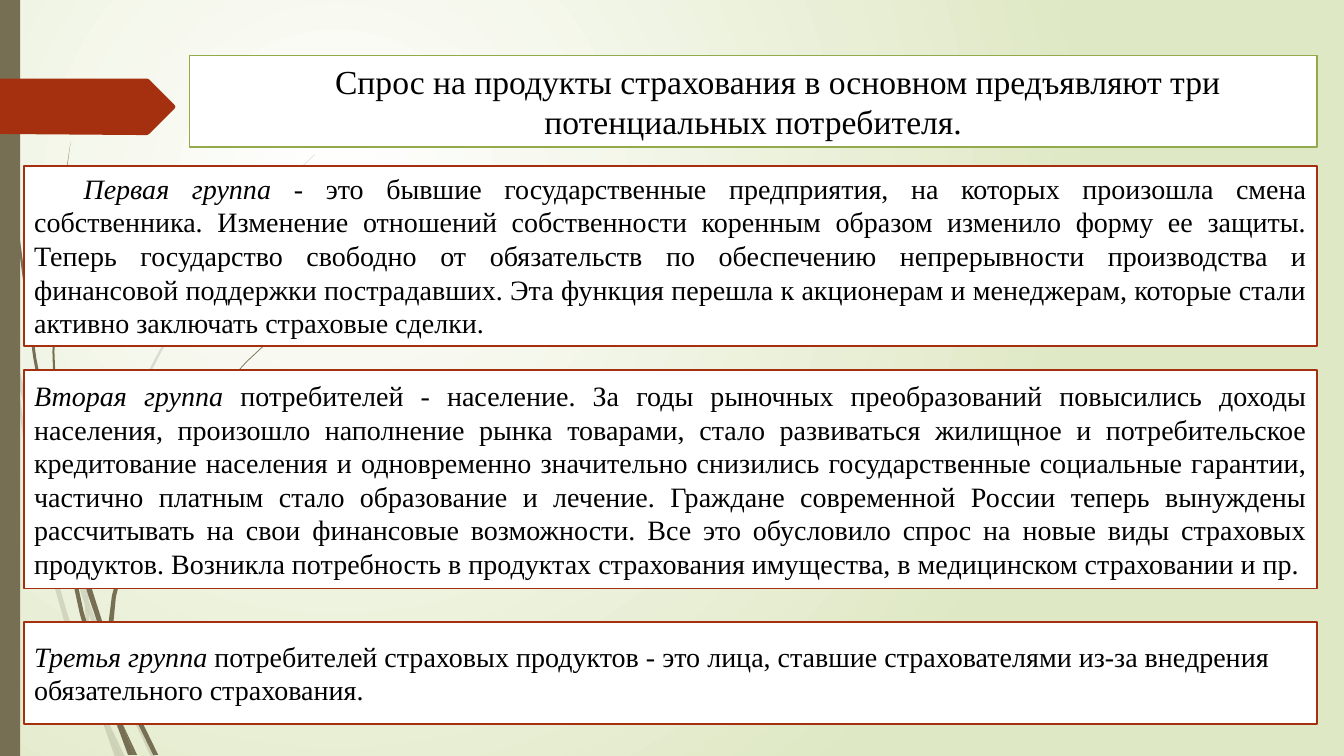
from dataclasses import dataclass

import lxml.etree
import pptx
import pptx.dml.color
import pptx.enum.shapes
import pptx.enum.text
import pptx.oxml.ns
import pptx.util

Inches = pptx.util.Inches
ALIGN = pptx.enum.text.PP_ALIGN
ANCHOR = pptx.enum.text.MSO_ANCHOR
RECT = pptx.enum.shapes.MSO_SHAPE.RECTANGLE

COLORS = {
    "white": "FFFFFF",
    "black": "000000",
    "pale": "DFE8C4",
    "stem": "766F54",
    "red": "A53010",
    "green": "92AA4C",
}
FONT = "Times New Roman"
INDENT = 0.49


@dataclass
class Box:
    top: float
    height: float
    lead: str
    text: str
    align: ALIGN = ALIGN.JUSTIFY
    anchor: ANCHOR = ANCHOR.MIDDLE
    indent: float = 0


BOXES = [
    Box(1.65, 1.78, "Первая группа",
        " - это бывшие государственные предприятия, на которых произошла смена собственника. "
        "Изменение отношений собственности коренным образом изменило форму ее защиты. "
        "Теперь государство свободно от обязательств по обеспечению непрерывности производства "
        "и финансовой поддержки пострадавших. Эта функция перешла к акционерам и менеджерам, "
        "которые стали активно заключать страховые сделки.",
        anchor=ANCHOR.TOP, indent=INDENT),
    Box(3.67, 2.17, "Вторая группа",
        " потребителей - население. За годы рыночных преобразований повысились доходы населения, "
        "произошло наполнение рынка товарами, стало развиваться жилищное и потребительское "
        "кредитование населения и одновременно значительно снизились государственные социальные "
        "гарантии, частично платным стало образование и лечение. Граждане современной России "
        "теперь вынуждены рассчитывать на свои финансовые возможности. Все это обусловило спрос "
        "на новые виды страховых продуктов. Возникла потребность в продуктах страхования "
        "имущества, в медицинском страховании и пр."),
    Box(6.17, 1.01, "Третья группа",
        " потребителей страховых продуктов - это лица, ставшие страхователями из-за внедрения "
        "обязательного страхования.",
        align=ALIGN.LEFT),
]

# Outline points in hundredths of an inch
PALE_STEMS = [
    [(11, 350), (9, 322), (0, 282), (0, 299), (10, 344)],
    [(58, 522), (84, 599), (85, 586), (62, 520), (36, 434), (14, 345), (17, 376), (36, 450)],
    [(92, 607), (88, 596), (88, 610), (123, 694), (150, 751), (155, 751), (127, 692)],
    [(119, 751), (124, 751), (105, 711)],
    [(93, 683), (70, 619), (48, 545), (31, 469), (17, 376), (11, 350), (28, 470), (44, 546),
     (65, 621), (92, 693), (101, 714), (99, 707)],
    [(84, 599), (87, 646), (93, 683), (96, 692), (105, 711), (103, 706), (91, 646), (88, 610),
     (88, 608)],
    [(88, 584), (93, 522), (110, 462), (132, 404), (160, 349), (193, 295), (229, 245), (268, 198),
     (290, 175), (312, 154), (312, 153), (289, 175), (268, 197), (228, 244), (191, 294),
     (158, 348), (129, 403), (107, 461), (91, 521), (85, 584), (85, 586), (88, 596)],
    [(101, 714), (114, 751), (119, 751)],
    [(88, 608), (88, 596), (85, 586), (84, 599)],
    [(96, 692), (93, 683), (99, 707), (101, 714), (119, 751), (105, 711)],
]
DARK_STEMS = [
    [(7, 110), (17, 233), (33, 355), (56, 477), (57, 481), (55, 457), (55, 453), (36, 355),
     (19, 232), (8, 109), (5, 48), (4, 0), (3, 0), (4, 48)],
    [(88, 592), (106, 645), (106, 631), (93, 590), (75, 532), (60, 472), (64, 505), (75, 549)],
    [(113, 649), (110, 641), (111, 656), (132, 708), (152, 749), (157, 749), (136, 706)],
    [(110, 691), (98, 657), (83, 607), (72, 556), (64, 505), (57, 477), (68, 557), (79, 608),
     (93, 659), (111, 708), (117, 722), (116, 717)],
    [(60, 472), (58, 453), (54, 349), (58, 245), (63, 193), (70, 141), (62, 193), (56, 245),
     (52, 349), (55, 449)],
    [(133, 749), (136, 749), (122, 719)],
    [(111, 633), (115, 592), (125, 552), (140, 513), (158, 476), (181, 440), (205, 406),
     (231, 374), (245, 359), (261, 344), (260, 344), (245, 358), (231, 373), (204, 405),
     (179, 439), (156, 474), (137, 512), (122, 551), (111, 591), (106, 631), (110, 641)],
    [(117, 722), (127, 749), (131, 749)],
    [(106, 645), (110, 691), (116, 706), (122, 719), (121, 716), (111, 656), (109, 651)],
    [(116, 706), (110, 691), (116, 717), (117, 722), (130, 749), (133, 749), (122, 719)],
]
ARROW = [(173, 108), (148, 133), (146, 134), (136, 134), (0, 133), (0, 78), (146, 78), (148, 79),
         (173, 104), (174, 106)]


def rgb(name: str) -> pptx.dml.color.RGBColor:
    return pptx.dml.color.RGBColor.from_string(COLORS[name])


def paint(shape, fill: str, line: str | None = None) -> None:
    shape.fill.solid()
    shape.fill.fore_color.rgb = rgb(fill)
    if line:
        shape.line.color.rgb = rgb(line)
        shape.line.width = pptx.util.Pt(1.25)
    else:
        shape.line.fill.background()


def place(shape, left: float, top: float, width: float, height: float) -> None:
    shape.left, shape.top = Inches(left), Inches(top)
    shape.width, shape.height = Inches(width), Inches(height)


def write(shape, text: str, *, lead: str = "", size: int = 20, align: ALIGN = ALIGN.LEFT,
          anchor: ANCHOR = ANCHOR.TOP, indent: float = 0) -> None:
    """Fill the shape with one paragraph that opens with an italic lead."""
    frame = shape.text_frame
    frame.word_wrap = True
    frame.auto_size = pptx.enum.text.MSO_AUTO_SIZE.NONE
    frame.vertical_anchor = anchor
    para = frame.paragraphs[0]
    para.alignment = align
    if indent:
        props = para._p.get_or_add_pPr()
        props.set("marL", "0")
        props.set("indent", str(Inches(indent)))
    for part, slant in ((lead, True), (text, False)):
        if part:
            run = para.add_run()
            run.text = part
            run.font.name = FONT
            run.font.size = pptx.util.Pt(size)
            run.font.italic = slant
            run.font.color.rgb = rgb("black")


def draw(slide, points: list[tuple[int, int]], color: str, alpha: int = 100) -> None:
    pen = slide.shapes.build_freeform(*points[0], scale=Inches(0.01))
    pen.add_line_segments(points[1:], close=True)
    shape = pen.convert_to_shape()
    shape.shadow.inherit = False
    paint(shape, color)
    if alpha < 100:
        tint = shape.element.spPr.find(".//" + pptx.oxml.ns.qn("a:srgbClr"))
        lxml.etree.SubElement(tint, pptx.oxml.ns.qn("a:alpha"), val=str(alpha * 1000))


def add_rect(slide, *spot: float, fill: str, line: str | None = None):
    shape = slide.shapes.add_shape(RECT, *map(Inches, spot))
    shape.shadow.inherit = False
    paint(shape, fill, line)
    return shape


def set_back(slide) -> None:
    """Give the slide a round gradient from white to pale green."""
    fill = slide.background.fill
    fill.gradient()
    for stop, name, spot in zip(fill.gradient_stops, ("white", "pale"), (0, 1)):
        stop.color.rgb = rgb(name)
        stop.position = spot
    qn = pptx.oxml.ns.qn
    grad = slide.element.find(".//" + qn("a:gradFill"))
    ring = lxml.etree.Element(qn("a:path"), path="circle")
    lxml.etree.SubElement(ring, qn("a:fillToRect"), l="50000", t="50000", r="100000", b="100000")
    grad.replace(grad.find(qn("a:lin")), ring)


def main() -> None:
    deck = pptx.Presentation()
    deck.slide_width, deck.slide_height = Inches(13.33), Inches(7.5)
    slide = deck.slides.add_slide(deck.slide_layouts[5])
    set_back(slide)

    for stem in PALE_STEMS:
        draw(slide, stem, "stem", alpha=20)
    for stem in DARK_STEMS:
        draw(slide, stem, "stem")
    add_rect(slide, 0, 0, 0.2, 7.5, fill="stem")
    draw(slide, ARROW, "red")

    title = slide.shapes.title
    place(title, 1.88, 0.55, 11.18, 0.91)
    paint(title, "white", "green")
    write(title, "Спрос на продукты страхования в основном предъявляют три потенциальных потребителя.",
          size=24, align=ALIGN.CENTER, indent=INDENT)

    for box in BOXES:
        shape = add_rect(slide, 0.24, box.top, 12.82, box.height, fill="white", line="red")
        write(shape, box.text, lead=box.lead, align=box.align, anchor=box.anchor,
              indent=box.indent)
    deck.save("out.pptx")


if __name__ == "__main__":
    main()
